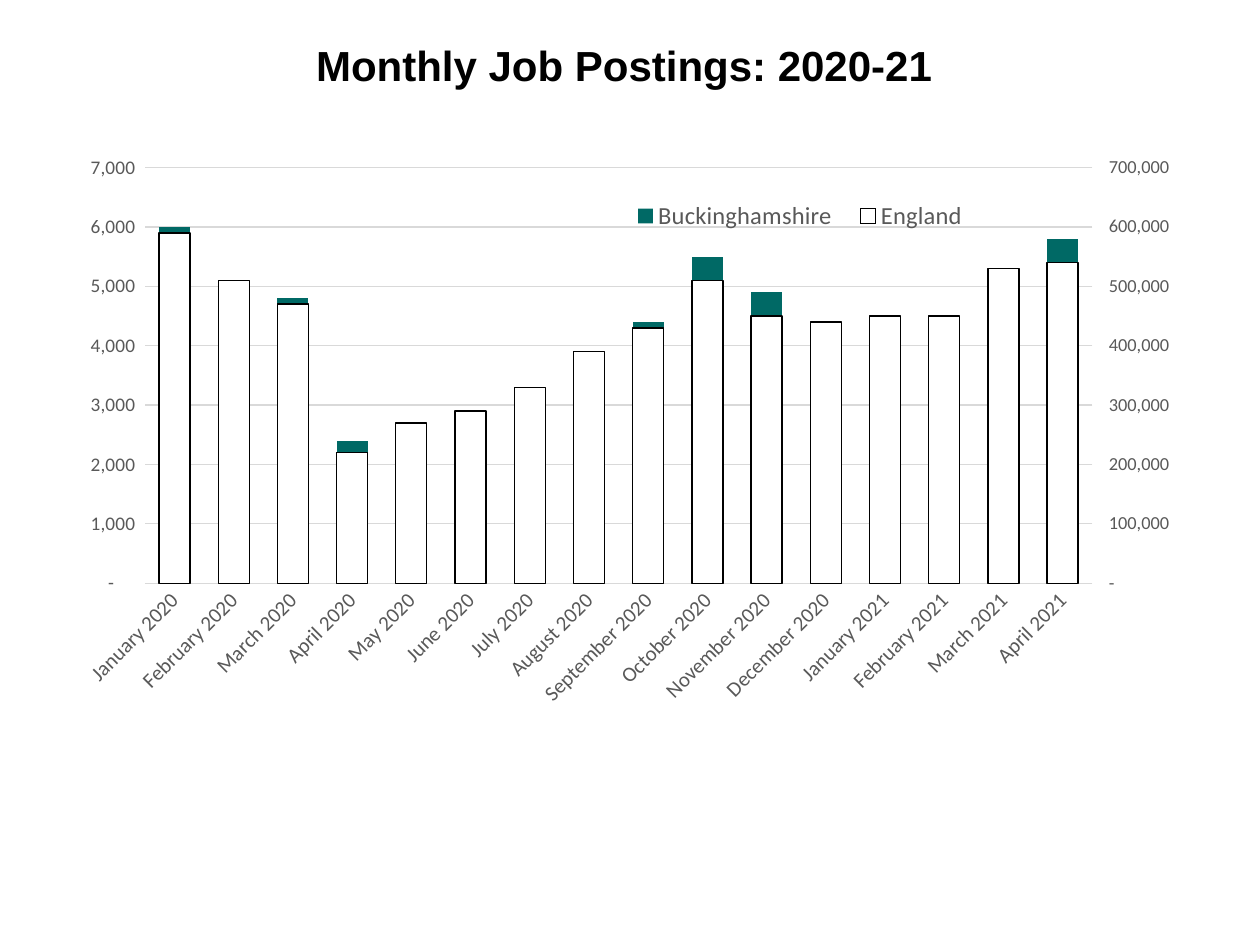
from copy import deepcopy

from lxml import etree
from pptx import Presentation, util as u
from pptx.chart.axis import ValueAxis
from pptx.chart.data import CategoryChartData
from pptx.dml.color import RGBColor
from pptx.enum import chart as ch, text
from pptx.oxml.ns import qn

# Content
TITLE = "Monthly Job Postings: 2020-21 "
MONTHS = ["January", "February", "March", "April", "May", "June", "July", "August",
          "September", "October", "November", "December"]
CATEGORIES = [f"{month} 2020" for month in MONTHS] + [f"{month} 2021" for month in MONTHS[:4]]
SERIES = {
    "Buckinghamshire": [6000, 5000, 4800, 2400, 2500, 2700, 3300, 3700,
                        4400, 5500, 4900, 4000, 4500, 4500, 5300, 5800],
    "England": [590000, 510000, 470000, 220000, 270000, 290000, 330000, 390000,
                430000, 510000, 450000, 440000, 450000, 450000, 530000, 540000],
}
NUMBER_FORMAT = '_-* #,##0_-;\\-* #,##0_-;_-* "-"??_-;_-@_-'
COLORS = {"title": "000000", "label": "595959", "grid": "D9D9D9",
          "county": "006965", "country": "FFFFFF", "outline": "000000"}

# Left, top, width and height on the slide, in inches
TITLE_BOX = (0.5, -0.11, 9, 1.25)
CHART_BOX = (0.5, 1.14, 9, 4.95)
PLOT_BOX = (1.15, 1.33, 7.52, 3.3)
LEGEND_BOX = (4.9, 1.54, 2.9, 0.35)


def color(name):
    return RGBColor.from_string(COLORS[name])


def set_font(font, size, name="Calibri", color_name="label", bold=False):
    font.name, font.size, font.bold = name, u.Pt(size), bold
    font.color.rgb = color(color_name)


def set_line(line, color_name):
    line.color.rgb = color(color_name)
    line.width = u.Pt(0.75)


def set_layout(parent, index, box, inner=False):
    """Place a chart part, given in slide inches, by fractions of the chart's size."""
    for old in parent.findall(qn("c:layout")):
        parent.remove(old)
    left, top, width, height = box
    chart_left, chart_top, chart_width, chart_height = CHART_BOX
    layout = etree.Element(qn("c:layout"))
    manual = etree.SubElement(layout, qn("c:manualLayout"))
    settings = {"layoutTarget": "inner"} if inner else {}
    settings.update(xMode="edge", yMode="edge",
                    x=(left - chart_left) / chart_width, y=(top - chart_top) / chart_height,
                    w=width / chart_width, h=height / chart_height)
    for tag, value in settings.items():
        etree.SubElement(manual, qn(f"c:{tag}")).set("val", str(value))
    parent.insert(index, layout)


def set_scale(axis, maximum, size):
    axis.minimum_scale, axis.maximum_scale, axis.major_unit = 0, maximum, maximum / 7
    set_font(axis.tick_labels.font, size)


def add_right_axis(chart):
    """Move the last series to a second bar group with its own value axis."""
    plot_area = chart._chartSpace.chart.plotArea
    bars = plot_area.find(qn("c:barChart"))
    right_bars = deepcopy(bars)
    bars.remove(bars.findall(qn("c:ser"))[1])
    right_bars.remove(right_bars.findall(qn("c:ser"))[0])
    bars.addnext(right_bars)

    category_axis = deepcopy(plot_area.find(qn("c:catAx")))
    value_axis = deepcopy(plot_area.find(qn("c:valAx")))
    ids = ("50010", "50020")
    for element, value in zip(right_bars.findall(qn("c:axId")), ids):
        element.set("val", value)
    for axis, own, other in ((category_axis, *ids), (value_axis, *ids[::-1])):
        axis.find(qn("c:axId")).set("val", own)
        axis.find(qn("c:crossAx")).set("val", other)
    category_axis.find(qn("c:delete")).set("val", "1")
    value_axis.find(qn("c:axPos")).set("val", "r")
    value_axis.find(qn("c:crosses")).set("val", "max")
    plot_area.findall(qn("c:valAx"))[-1].addnext(value_axis)
    value_axis.addnext(category_axis)

    right_axis = ValueAxis(value_axis)
    right_axis.has_major_gridlines = False
    right_axis.major_tick_mark = ch.XL_TICK_MARK.OUTSIDE
    set_scale(right_axis, 700000, 10.5)


presentation = Presentation()
presentation.slide_width, presentation.slide_height = u.Inches(10), u.Inches(7.5)
slide = presentation.slides.add_slide(presentation.slide_layouts[5])

# Title
title = slide.shapes.title
title.left, title.top, title.width, title.height = map(u.Inches, TITLE_BOX)
title.text_frame.text = TITLE
title.text_frame.vertical_anchor = text.MSO_ANCHOR.MIDDLE
paragraph = title.text_frame.paragraphs[0]
paragraph.alignment = text.PP_ALIGN.CENTER
set_font(paragraph.font, 24, "Arial", "title", True)

# Chart
data = CategoryChartData()
data.categories = CATEGORIES
for name, values in SERIES.items():
    data.add_series(name, values)
chart = slide.shapes.add_chart(
    ch.XL_CHART_TYPE.COLUMN_CLUSTERED, *map(u.Inches, CHART_BOX), data).chart
chart.has_title = False
set_font(chart.font, 10, color_name="title")

# Columns
plot = chart.plots[0]
plot.gap_width = 91
plot.vary_by_categories = False
for series, fill in zip(plot.series, ("county", "country")):
    series.invert_if_negative = False
    series.format.fill.solid()
    series.format.fill.fore_color.rgb = color(fill)
set_line(plot.series[1].format.line, "outline")

# Axes
months = chart.category_axis
months.major_tick_mark = ch.XL_TICK_MARK.NONE
set_font(months.tick_labels.font, 12)
set_line(months.format.line, "grid")
months._element.find(qn("c:txPr")).find(qn("a:bodyPr")).set("rot", "-2700000")

left_axis = chart.value_axis
left_axis.major_tick_mark = ch.XL_TICK_MARK.NONE
left_axis.format.line.fill.background()
set_line(left_axis.major_gridlines.format.line, "grid")
left_axis.tick_labels.number_format = NUMBER_FORMAT
left_axis.tick_labels.number_format_is_linked = False
set_scale(left_axis, 7000, 11)
add_right_axis(chart)
set_layout(chart._chartSpace.chart.plotArea, 0, PLOT_BOX, inner=True)

# Legend
chart.has_legend = True
chart.legend.position = ch.XL_LEGEND_POSITION.BOTTOM
chart.legend.include_in_layout = False
set_font(chart.legend.font, 14)
set_layout(chart.legend._element, 1, LEGEND_BOX)

presentation.save("out.pptx")
